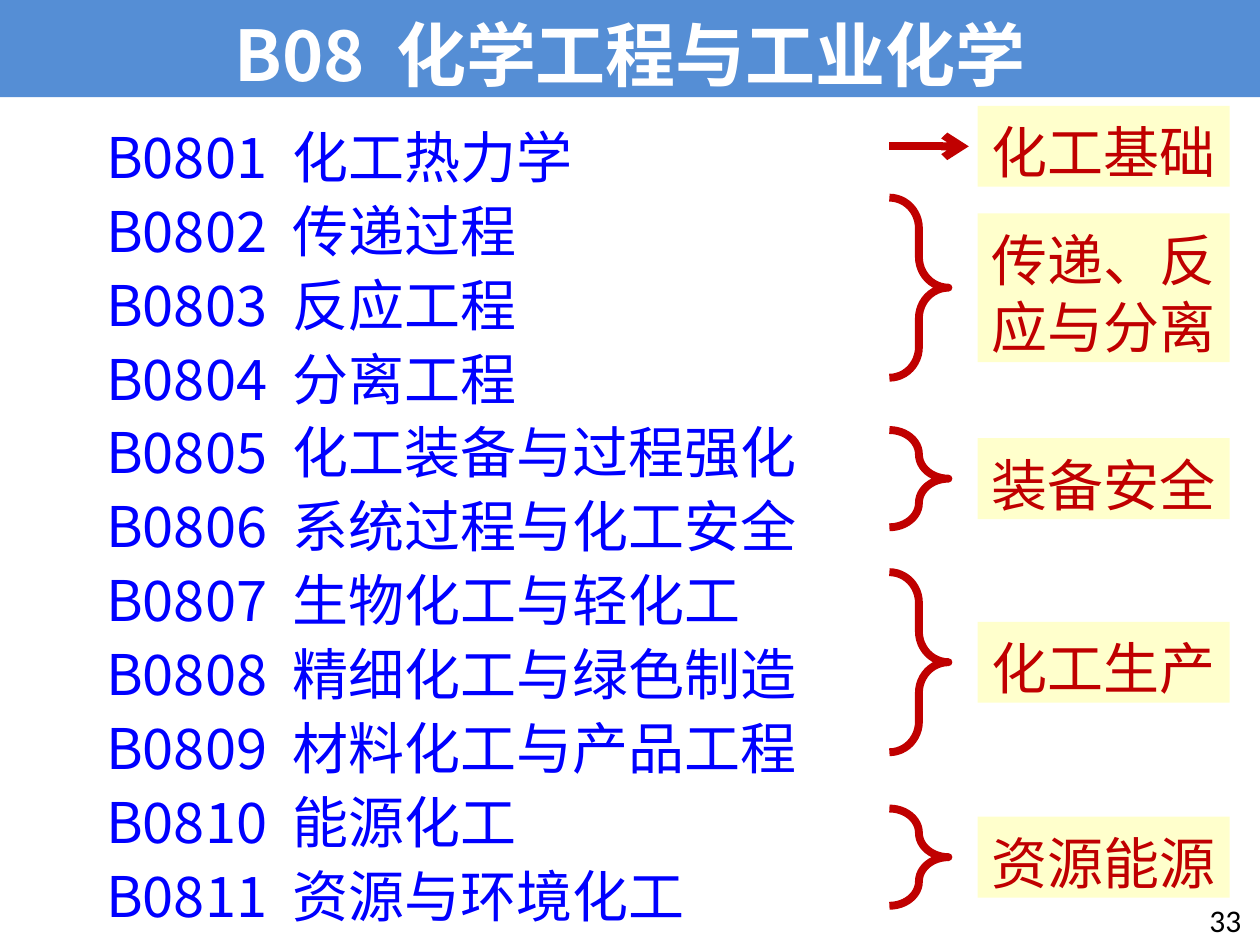
from lxml.etree import SubElement
from pptx import Presentation
from pptx.dml.color import RGBColor
from pptx.enum.shapes import MSO_CONNECTOR, MSO_SHAPE
from pptx.enum.text import MSO_ANCHOR, PP_ALIGN
from pptx.oxml.ns import qn
from pptx.util import Cm, Pt

FONT = "Noto Sans CJK SC"
RED, BLUE, WHITE = "C00000", "0000FF", "FFFFFF"
TITLE = ("B08", "化学工程与工业化学")
TOPICS = ["化工热力学", "传递过程", "反应工程", "分离工程", "化工装备与过程强化",
          "系统过程与化工安全", "生物化工与轻化工", "精细化工与绿色制造",
          "材料化工与产品工程", "能源化工", "资源与环境化工"]
GROUPS = [("传递、反应与分离", 5.8, 3.63, 3.0), ("装备安全", 9.65, 1.96, 1.63),
          ("化工生产", 13.35, 3.63, 1.63), ("资源能源", 17.28, 1.96, 1.63)]


def rgb(value):
    return RGBColor.from_string(value)


def set_attrs(obj, values):
    for name, value in values.items():
        setattr(obj, name, value)


def add_run(p, text, size, color, bold=False, font=FONT):
    r = p.add_run()
    r.text = text
    set_attrs(r.font, {"size": Pt(size), "bold": bold, "name": font})
    r.font.color.rgb = rgb(color)
    SubElement(r.font._element, qn("a:ea"), typeface=font)
    return r


def add_code_name(p, code, name, size, color, bold=False):
    add_run(p, code, size, color, bold)
    gap = add_run(p, " ", size, color, bold)
    gap.font._element.set("spc", str(round(size * 22.4)))
    add_run(p, name, size, color, bold)


def add_box(s, x, y, w, h, fill, line_spacing):
    sp = s.shapes.add_shape(MSO_SHAPE.RECTANGLE, Cm(x), Cm(y), Cm(w), Cm(h))
    sp.shadow.inherit = False
    sp.fill.solid()
    sp.fill.fore_color.rgb = rgb(fill)
    sp.line.fill.background()
    tf = sp.text_frame
    set_attrs(tf, {"word_wrap": True, "vertical_anchor": MSO_ANCHOR.MIDDLE,
                   "margin_top": Cm(0.2), "margin_bottom": 0})
    p = tf.paragraphs[0]
    set_attrs(p, {"alignment": PP_ALIGN.CENTER, "line_spacing": Pt(line_spacing)})
    return p


def add_title(s, x, y, w, h):
    add_code_name(add_box(s, x, y, w, h, "558ED5", 48), *TITLE, 40, WHITE, True)


def add_topics(s, x, y, w, h):
    tf = s.shapes.add_textbox(Cm(x), Cm(y), Cm(w), Cm(h)).text_frame
    set_attrs(tf, {"word_wrap": True, "margin_left": Cm(0.64)})
    for i, topic in enumerate(TOPICS, 1):
        p = tf.paragraphs[0] if i == 1 else tf.add_paragraph()
        p.line_spacing = Pt(42.2)
        add_code_name(p, f"B08{i:02}", topic, 32, BLUE)


def add_label(s, x, middle, h, text):
    p = add_box(s, x + 1.78, middle - h / 2, 5.08, h, "FFFFCC", 38.4)
    add_run(p, text, 32, RED)


def style_line(sp):
    sp.line.color.rgb = rgb(RED)
    sp.line.width = Pt(4.5)


def add_arrow_group(s, x, middle, text):
    add_label(s, x, middle, 1.63, text)
    line = s.shapes.add_connector(MSO_CONNECTOR.STRAIGHT, Cm(x), Cm(middle),
                                  Cm(x + 1.6), Cm(middle))
    style_line(line)
    SubElement(line.line._get_or_add_ln(), qn("a:tailEnd"), type="arrow")
    SubElement(line._element.spPr, qn("a:effectLst"))


def add_brace_group(s, x, text, middle, brace_h, label_h):
    add_label(s, x, middle, label_h, text)
    sp = s.shapes.add_shape(MSO_SHAPE.RIGHT_BRACE, Cm(x), Cm(middle - brace_h / 2),
                            Cm(1.19), Cm(brace_h))
    sp.shadow.inherit = False
    sp.fill.background()
    sp.adjustments[0] = 0.52
    sp.adjustments[1] = 0.5
    style_line(sp)


def add_page_number(s, x, y, w, h):
    tf = s.shapes.add_textbox(Cm(x), Cm(y), Cm(w), Cm(h)).text_frame
    tf.word_wrap = False
    add_run(tf.paragraphs[0], "33", 18, "000000", font="Calibri")


def main():
    prs = Presentation()
    set_attrs(prs, {"slide_width": Cm(25.4), "slide_height": Cm(19.05)})
    s = prs.slides.add_slide(prs.slide_layouts[6])
    add_page_number(s, 24.13, 18.03, 1.27, 1.02)
    add_topics(s, 1.5, 2.21, 16.61, 16.8)
    add_title(s, 0, 0, 25.4, 1.96)
    add_arrow_group(s, 17.93, 2.95, "化工基础")
    for group in GROUPS:
        add_brace_group(s, 17.93, *group)
    prs.save("out.pptx")


if __name__ == "__main__":
    main()
